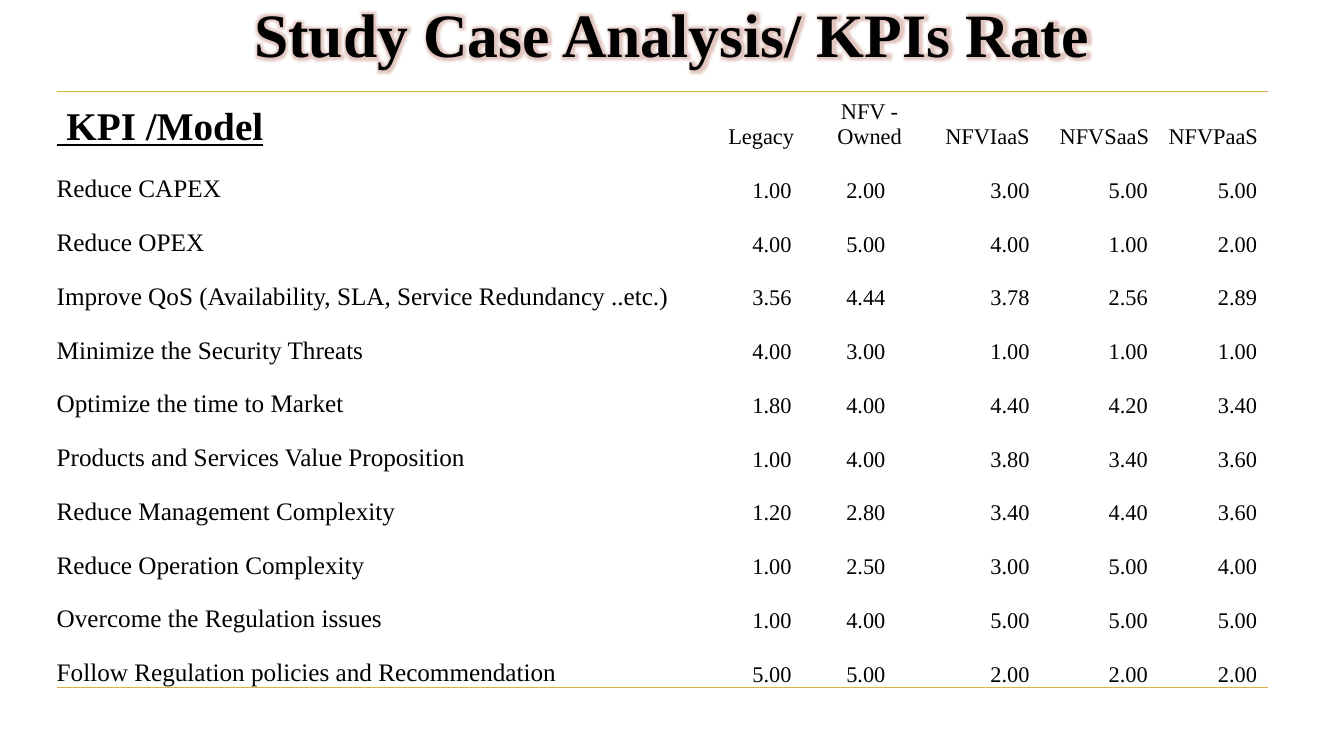
from dataclasses import dataclass

from lxml import etree
from pptx import Presentation
from pptx.dml.color import RGBColor
from pptx.enum.text import MSO_ANCHOR, PP_ALIGN
from pptx.oxml import parse_xml
from pptx.oxml.ns import nsdecls, qn
from pptx.util import Pt

CENTER, RIGHT, JUSTIFY = PP_ALIGN.CENTER, PP_ALIGN.RIGHT, PP_ALIGN.JUSTIFY
BOTTOM = MSO_ANCHOR.BOTTOM
FONT = "Times New Roman"
NO_STYLE = "{2D5ABB26-0587-4C30-8999-92F81FD0307C}"
COLORS = {"text": "000000", "rule": "D9B247", "outline": "FFFFFF", "glow": "B5705F"}


@dataclass
class Model:
    name: str
    width: float
    right_margin: float


@dataclass
class Kpi:
    name: str
    rates: tuple[float, ...]


KPI_WIDTH, HEADER_HEIGHT, KPI_HEIGHT = 465.1, 41.2, 38.43
MODELS = [
    Model("Legacy", 76.3, 16.5),
    Model("NFV - Owned", 78.5, 28),
    Model("NFVIaaS", 90, 15),
    Model("NFVSaaS", 77, 7.5),
    Model("NFVPaaS", 78.5, 8),
]
KPIS = [
    Kpi("Reduce CAPEX", (1, 2, 3, 5, 5)),
    Kpi("Reduce OPEX", (4, 5, 4, 1, 2)),
    Kpi("Improve QoS (Availability, SLA, Service Redundancy ..etc.)",
        (3.56, 4.44, 3.78, 2.56, 2.89)),
    Kpi("Minimize the Security Threats", (4, 3, 1, 1, 1)),
    Kpi("Optimize the time to Market", (1.8, 4, 4.4, 4.2, 3.4)),
    Kpi("Products and Services Value Proposition", (1, 4, 3.8, 3.4, 3.6)),
    Kpi("Reduce Management Complexity", (1.2, 2.8, 3.4, 4.4, 3.6)),
    Kpi("Reduce Operation Complexity", (1, 2.5, 3, 5, 4)),
    Kpi("Overcome the Regulation issues", (1, 4, 5, 5, 5)),
    Kpi("Follow Regulation policies and Recommendation", (5, 5, 2, 2, 2)),
]


def add_text(tf, text: str, size: float, align, bold=False, underline=False):
    p = tf.paragraphs[0]
    p.alignment = align
    r = p.add_run()
    r.text = text
    r.font.size = Pt(size)
    r.font.name = FONT
    r.font.bold = bold
    r.font.underline = underline
    r.font.color.rgb = RGBColor.from_string(COLORS["text"])
    return r


def fill_cell(cell, text: str, size: float, align, right_margin: float = 0,
              heading: bool = False) -> None:
    cell.margin_left = cell.margin_top = cell.margin_bottom = 0
    cell.margin_right = Pt(right_margin)
    cell.vertical_anchor = BOTTOM
    cell.fill.background()
    add_text(cell.text_frame, text, size, align, heading, heading)


def add_rule(cell, side: str) -> None:
    line = parse_xml(
        f'<a:{side} {nsdecls("a")} w="{Pt(1)}"><a:solidFill>'
        f'<a:srgbClr val="{COLORS["rule"]}"/></a:solidFill></a:{side}>')
    cell._tc.get_or_add_tcPr().insert(0, line)


def add_title(s) -> None:
    sp = s.shapes.add_textbox(0, Pt(-7.2), Pt(960), Pt(60.5))
    tf = sp.text_frame
    tf.word_wrap = True
    tf.vertical_anchor = BOTTOM
    r = add_text(tf, "Study Case Analysis/ KPIs Rate", 44, CENTER, bold=True)
    rPr = r._r.get_or_add_rPr()
    rPr.insert(0, parse_xml(
        f'<a:ln {nsdecls("a")} w="{Pt(0.75)}"><a:solidFill>'
        f'<a:srgbClr val="{COLORS["outline"]}"/></a:solidFill></a:ln>'))
    effects = etree.Element(qn("a:effectLst"))
    glow = etree.SubElement(effects, qn("a:glow"), rad=str(Pt(8)))
    color = etree.SubElement(glow, qn("a:srgbClr"), val=COLORS["glow"])
    etree.SubElement(color, qn("a:alpha"), val="40000")
    rPr.find(qn("a:solidFill")).addnext(effects)


def add_rates(s) -> None:
    widths = [KPI_WIDTH] + [m.width for m in MODELS]
    heights = [HEADER_HEIGHT] + [KPI_HEIGHT] * len(KPIS)
    table = s.shapes.add_table(
        len(heights), len(widths), Pt(40.5), Pt(65.5),
        Pt(sum(widths)), Pt(sum(heights))).table
    table.first_row = table.horz_banding = False
    table._tbl.tblPr.find(qn("a:tableStyleId")).text = NO_STYLE
    for column, width in zip(table.columns, widths):
        column.width = Pt(width)
    for row, height in zip(table.rows, heights):
        row.height = Pt(height)

    fill_cell(table.cell(0, 0), "\N{NO-BREAK SPACE}KPI /Model", 28, JUSTIFY, heading=True)
    for j, model in enumerate(MODELS, 1):
        fill_cell(table.cell(0, j), model.name, 16, CENTER)
    for i, kpi in enumerate(KPIS, 1):
        fill_cell(table.cell(i, 0), kpi.name, 18, JUSTIFY)
        for j, (model, rate) in enumerate(zip(MODELS, kpi.rates), 1):
            fill_cell(table.cell(i, j), f"{rate:.2f}", 16, RIGHT, model.right_margin)
    for j in range(len(widths)):
        add_rule(table.cell(0, j), "lnT")
        add_rule(table.cell(len(KPIS), j), "lnB")


def main() -> None:
    prs = Presentation()
    prs.slide_width, prs.slide_height = Pt(960), Pt(540)
    s = prs.slides.add_slide(prs.slide_layouts[6])
    add_rates(s)
    add_title(s)
    prs.save("out.pptx")


if __name__ == "__main__":
    main()
